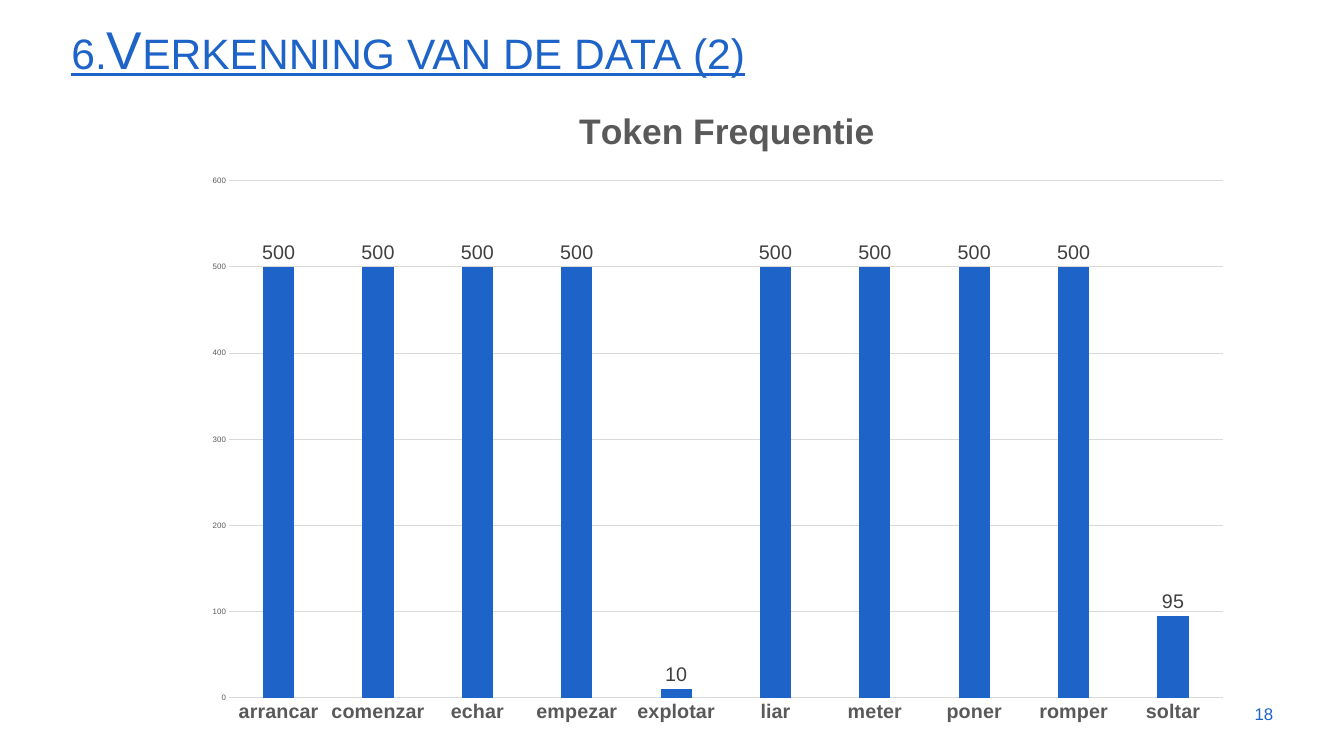
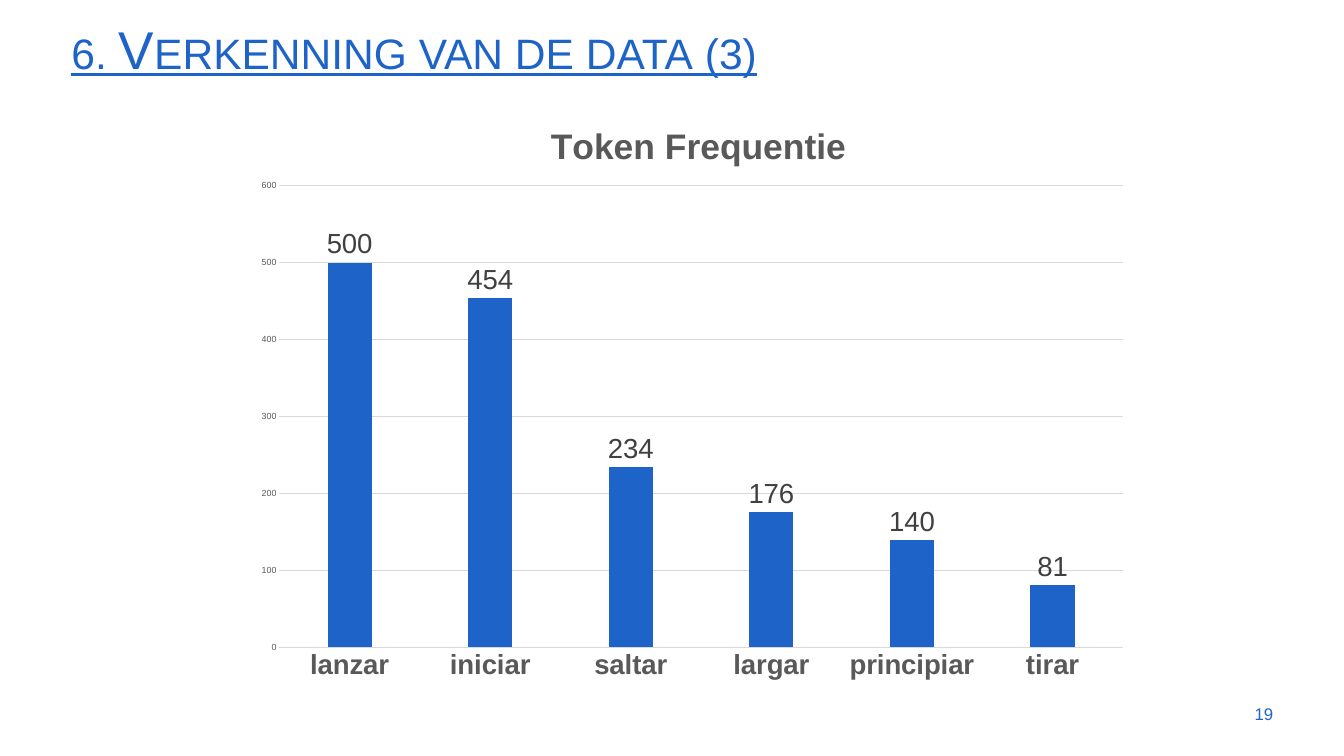
from lxml import etree
from pptx import Presentation
from pptx.chart.data import CategoryChartData
from pptx.dml.color import RGBColor
from pptx.enum.chart import XL_CHART_TYPE, XL_LABEL_POSITION, XL_TICK_MARK
from pptx.enum.text import MSO_ANCHOR, PP_ALIGN
from pptx.oxml.ns import qn
from pptx.util import Inches, Pt

COLUMNS = XL_CHART_TYPE.COLUMN_CLUSTERED
OUTSIDE_END = XL_LABEL_POSITION.OUTSIDE_END
NO_TICK = XL_TICK_MARK.NONE
TOP, MIDDLE = MSO_ANCHOR.TOP, MSO_ANCHOR.MIDDLE
LEFT, RIGHT = PP_ALIGN.LEFT, PP_ALIGN.RIGHT

BLUE, GREY, DARK, RULE = "1E64C8", "595959", "404040", "D9D9D9"
TITLE_FORMAT = {"size": Pt(54), "underline": True}
NUMBER_FORMAT = {"size": Pt(17.1)}
CHART_TITLE = "Token Frequentie"

SLIDES = [
    {
        "title": "6.Verkenning van de data (2)",
        "number": "18",
        "frame": (2.7, 1.23, 14.86, 9.16),
        "plot": (3.23, 2.55, 14.02, 7.3),
        "heading": (8.08, 1.44),
        "label_size": 20,
        "value_size": 8,
        "tokens": {
            "arrancar": 500, "comenzar": 500, "echar": 500, "empezar": 500,
            "explotar": 10, "liar": 500, "meter": 500, "poner": 500,
            "romper": 500, "soltar": 95,
        },
    },
    {
        "title": "6. Verkenning van de data (3)",
        "number": "19",
        "frame": (3.44, 1.31, 12.66, 8.48),
        "plot": (3.94, 2.62, 11.9, 6.52),
        "heading": (7.68, 1.65),
        "label_size": 28,
        "value_size": 9,
        "tokens": {
            "lanzar": 500, "iniciar": 454, "saltar": 234,
            "largar": 176, "principiar": 140, "tirar": 81,
        },
    },
]


def color(value):
    """Turn a hex string into a colour."""
    return RGBColor.from_string(value)


def set_font(font, fill, **values):
    """Apply the shared typeface, a colour and further font attributes."""
    font.name = "Arial"
    font.color.rgb = color(fill)
    for name, value in values.items():
        setattr(font, name, value)


def add_text(slide, box, text, values, align=LEFT, anchor=TOP):
    """Add a one-line text box and return its run."""
    shape = slide.shapes.add_textbox(*map(Inches, box))
    frame = shape.text_frame
    frame.word_wrap = True
    frame.vertical_anchor = anchor
    paragraph = frame.paragraphs[0]
    paragraph.alignment = align
    run = paragraph.add_run()
    run.text = text
    set_font(run.font, BLUE, **values)
    return run


def add_title(slide, text):
    """Add the underlined slide title in small capitals."""
    run = add_text(slide, (0.91, 0.28, 17.18, 0.94), text, TITLE_FORMAT)
    run.font._element.set("cap", "small")
    slide.shapes[-1].text_frame.paragraphs[0].line_spacing = 0.9


def set_layout(parent, index, frame, box, inner=False):
    """Place a chart part by slide coordinates within the chart frame."""
    for old in parent.findall(qn("c:layout")):
        parent.remove(old)
    layout = etree.Element(qn("c:layout"))
    parent.insert(index, layout)
    manual = etree.SubElement(layout, qn("c:manualLayout"))
    left, top, width, height = frame
    values = {"xMode": "edge", "yMode": "edge"}
    if inner:
        values = {"layoutTarget": "inner", **values}
    values["x"] = (box[0] - left) / width
    values["y"] = (box[1] - top) / height
    if inner:
        values["w"] = box[2] / width
        values["h"] = box[3] / height
    for name, value in values.items():
        etree.SubElement(manual, qn("c:" + name)).set("val", str(value))


def style_line(line):
    """Draw a thin light grey line."""
    line.color.rgb = color(RULE)
    line.width = Pt(0.75)


def style_axes(chart, label_size, value_size):
    """Format the category and value axes."""
    category, value = chart.category_axis, chart.value_axis
    for axis in (category, value):
        axis.major_tick_mark = axis.minor_tick_mark = NO_TICK
    set_font(category.tick_labels.font, GREY, size=Pt(label_size), bold=True)
    set_font(value.tick_labels.font, GREY, size=Pt(value_size), bold=False)
    style_line(category.format.line)
    value.format.line.fill.background()
    value.has_major_gridlines = True
    style_line(value.major_gridlines.format.line)
    value.minimum_scale, value.maximum_scale, value.major_unit = 0, 600, 100


def style_columns(plot, label_size):
    """Format the columns and their value labels."""
    plot.gap_width, plot.overlap = 219, -27
    plot.vary_by_categories = False
    fill = plot.series[0].format.fill
    fill.solid()
    fill.fore_color.rgb = color(BLUE)
    plot.has_data_labels = True
    labels = plot.data_labels
    labels.show_value = True
    labels.position = OUTSIDE_END
    set_font(labels.font, DARK, size=Pt(label_size))


def add_frequency_chart(slide, content):
    """Add the column chart of token frequencies."""
    data = CategoryChartData()
    data.categories = list(content["tokens"])
    data.add_series("Series 1", list(content["tokens"].values()))
    frame = content["frame"]
    chart = slide.shapes.add_chart(COLUMNS, *map(Inches, frame), data).chart
    set_font(chart.font, "000000", size=Pt(10))
    chart.has_legend = False
    chart.has_title = True
    title = chart.chart_title
    title.text_frame.text = CHART_TITLE
    run = title.text_frame.paragraphs[0].runs[0]
    set_font(run.font, GREY, size=Pt(36), bold=True)
    style_axes(chart, content["label_size"], content["value_size"])
    style_columns(chart.plots[0], content["label_size"])
    chart_element = chart.element.find(qn("c:chart"))
    set_layout(chart_element.find(qn("c:title")), 1, frame, content["heading"])
    set_layout(chart_element.find(qn("c:plotArea")), 0, frame, content["plot"], True)


def main():
    """Build and save the presentation."""
    presentation = Presentation()
    presentation.slide_width = Inches(18.96)
    presentation.slide_height = Inches(10.67)
    for content in SLIDES:
        slide = presentation.slides.add_slide(presentation.slide_layouts[6])
        add_title(slide, content["title"])
        add_text(slide, (17.05, 9.79, 1.01, 0.57), content["number"],
                 NUMBER_FORMAT, RIGHT, MIDDLE)
        add_frequency_chart(slide, content)
    presentation.save("out.pptx")


if __name__ == "__main__":
    main()
